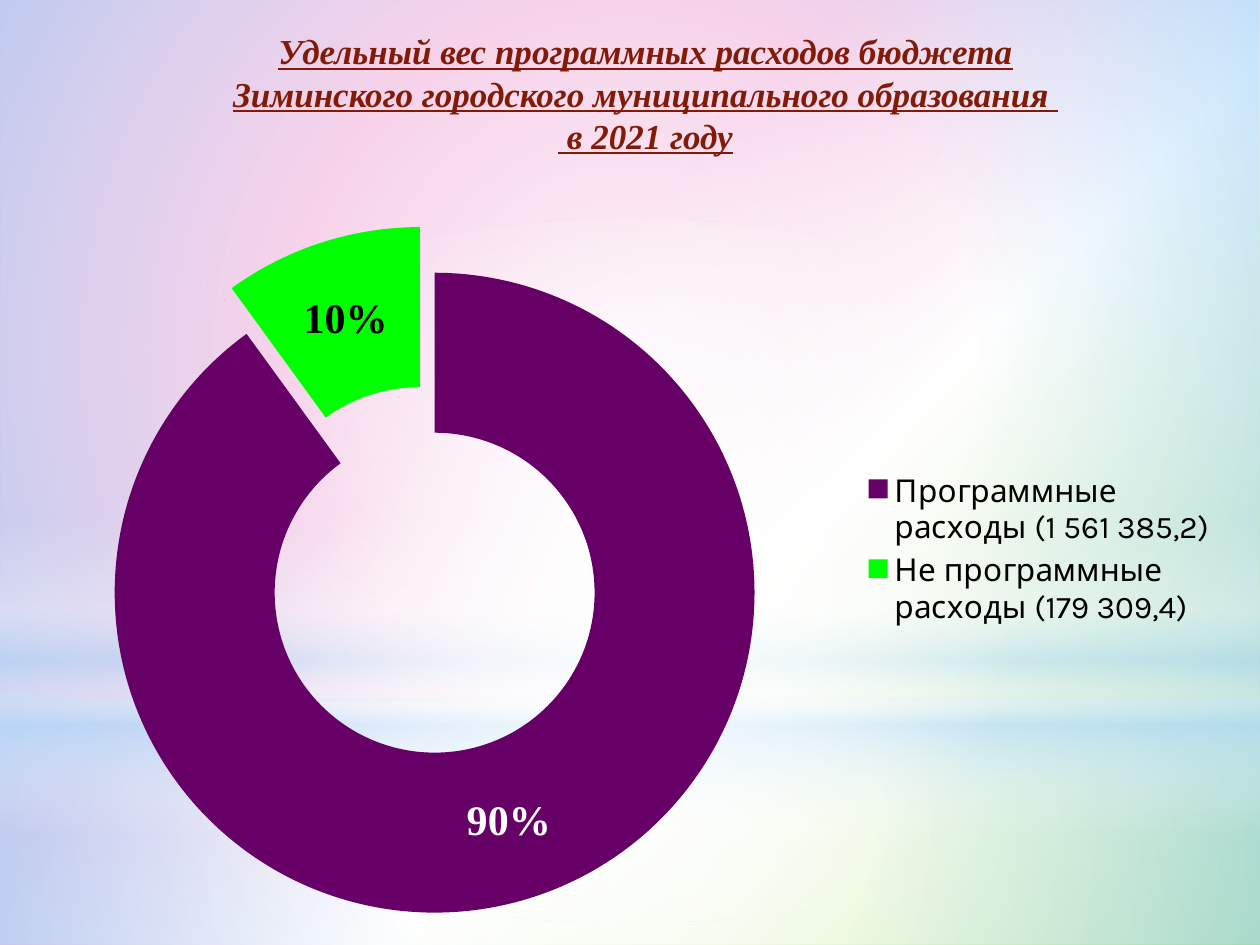
from lxml import etree
from pptx import Presentation
from pptx.chart.data import CategoryChartData
from pptx.dml.color import RGBColor
from pptx.enum.chart import XL_CHART_TYPE, XL_LEGEND_POSITION
from pptx.enum.shapes import MSO_SHAPE
from pptx.enum.text import MSO_ANCHOR, PP_ALIGN
from pptx.oxml import parse_xml
from pptx.oxml.ns import qn
from pptx.util import Pt

PX = 914400 // 126
RECT, OVAL, ROUND = MSO_SHAPE.RECTANGLE, MSO_SHAPE.OVAL, MSO_SHAPE.ROUNDED_RECTANGLE
A_NS = "http://schemas.openxmlformats.org/drawingml/2006/main"
SERIF = "Times New Roman"


def set_gradient(fill, props, stops, angle=None):
    """Stops are (position %, colour, opacity %); no angle means circular."""
    fill.gradient()
    gs = "".join(
        f'<a:gs pos="{pos * 1000}"><a:srgbClr val="{color}">'
        f'<a:alpha val="{alpha * 1000}"/></a:srgbClr></a:gs>'
        for pos, color, alpha in stops)
    if angle is None:
        way = ('<a:path path="circle"><a:fillToRect l="50000" t="50000" '
               'r="50000" b="50000"/></a:path>')
    else:
        way = f'<a:lin ang="{angle * 60000}" scaled="0"/>'
    old = props.find(qn("a:gradFill"))
    props.replace(old, parse_xml(
        f'<a:gradFill xmlns:a="{A_NS}" rotWithShape="1"><a:gsLst>{gs}</a:gsLst>{way}</a:gradFill>'))


def style_text(font, text=None, run=None, size=18, color="000000", name="Karla", **flags):
    if run is not None:
        run.text = text
    font.size, font.name = Pt(size), name
    font.color.rgb = RGBColor.from_string(color)
    for flag, value in flags.items():
        setattr(font, flag, value)


prs = Presentation()
prs.slide_width, prs.slide_height = 1260 * PX, 945 * PX
s = prs.slides.add_slide(prs.slide_layouts[6])

# Background
fill = s.background.fill
fill.gradient()
bg_props = s.element.find(".//" + qn("p:bgPr"))
set_gradient(fill, bg_props, [(0, "EA8AC8", 100), (39, "EA8AC8", 100),
                              (60, "FFFFFF", 100), (100, "81D31A", 100)], 45)

# Translucent veils over the background
veils = [
    (RECT, 0, 703, 1260, 242,
     [(0, "FFFFFF", 91), (37, "FFFFFF", 76), (100, "B4DCFA", 79)], None),
    (RECT, 0, 0, 1260, 703,
     [(0, "FFFFFF", 89), (48, "FFFFFF", 62), (100, "B4DCFA", 79)], None),
    (RECT, 0, 519, 1260, 315,
     [(0, "FFFFFF", 0), (29, "FFFFFF", 30), (45, "B4DCFA", 40),
      (55, "FFFFFF", 26), (65, "B4DCFA", 60), (100, "FFFFFF", 0)], 90),
    (OVAL, 0, 220, 1260, 703, [(0, "FFFFFF", 100), (56, "FFFFFF", 0)], None),
]
for kind, x, y, w, h, stops, angle in veils:
    sp = s.shapes.add_shape(kind, x * PX, y * PX, w * PX, h * PX)
    sp.shadow.inherit = False
    sp.line.fill.background()
    set_gradient(sp.fill, sp.element.spPr, stops, angle)

# Doughnut chart
data = CategoryChartData()
data.categories = ["Программные расходы (1 561 385,2)", "Не программные расходы (179 309,4)"]
data.add_series("Series 1", (90, 10))
chart = s.shapes.add_chart(XL_CHART_TYPE.DOUGHNUT, 39 * PX, 186 * PX,
                           1191 * PX, 728 * PX, data).chart
style_text(chart.font)
chart.has_title = False
chart.has_legend = True
chart.legend.position = XL_LEGEND_POSITION.RIGHT
chart.legend.include_in_layout = False

plot = chart.plots[0]
plot.vary_by_categories = True
series = plot.series[0]
for i, color in enumerate(("660066", "00FF00")):
    slice_fill = series.points[i].format.fill
    slice_fill.solid()
    slice_fill.fore_color.rgb = RGBColor.from_string(color)

# Percentage labels: white, black on the green slice
labels = series.data_labels
labels.show_value, labels.show_percentage = False, True
labels.number_format, labels.number_format_is_linked = "0%", False
style_text(labels.font, size=24, color="FFFFFF", name=SERIF, bold=True)
style_text(series.points[1].data_label.font, size=24, name=SERIF, bold=True)
green_label = labels._element.find(qn("c:dLbl"))
green_label.find(qn("c:showVal")).set("val", "0")
green_label.find(qn("c:showPercent")).set("val", "1")

# Exploded slices, hole size and plot area position
explosion = etree.Element(qn("c:explosion"), val="15")
series._element.find(qn("c:dPt")).addprevious(explosion)
plot._element.find(qn("c:holeSize")).set("val", "44")
plot_area = chart._chartSpace.chart.plotArea
old = plot_area.find(qn("c:layout"))
if old is not None:
    plot_area.remove(old)
layout = etree.Element(qn("c:layout"))
manual = etree.SubElement(layout, qn("c:manualLayout"))
for tag, value in (("layoutTarget", "inner"), ("xMode", "edge"), ("yMode", "edge"),
                   ("x", "0.016"), ("y", "0.055"), ("w", "0.62"), ("h", "0.945")):
    etree.SubElement(manual, qn("c:" + tag), val=value)
plot_area.insert(0, layout)

# Title
sp = s.shapes.add_shape(ROUND, 168 * PX, 39 * PX, 955 * PX, 108 * PX)
sp.shadow.inherit = False
sp.fill.background()
sp.line.fill.background()
tf = sp.text_frame
tf.word_wrap = True
tf.vertical_anchor = MSO_ANCHOR.MIDDLE
lines = ["Удельный вес программных расходов бюджета Зиминского городского "
         "муниципального образования ", " в 2021 году"]
for i, text in enumerate(lines):
    p = tf.add_paragraph() if i else tf.paragraphs[0]
    p.alignment = PP_ALIGN.CENTER
    r = p.add_run()
    style_text(r.font, text, r, size=20, color="821A08", name=SERIF,
               bold=True, italic=True, underline=True)

prs.save("out.pptx")
